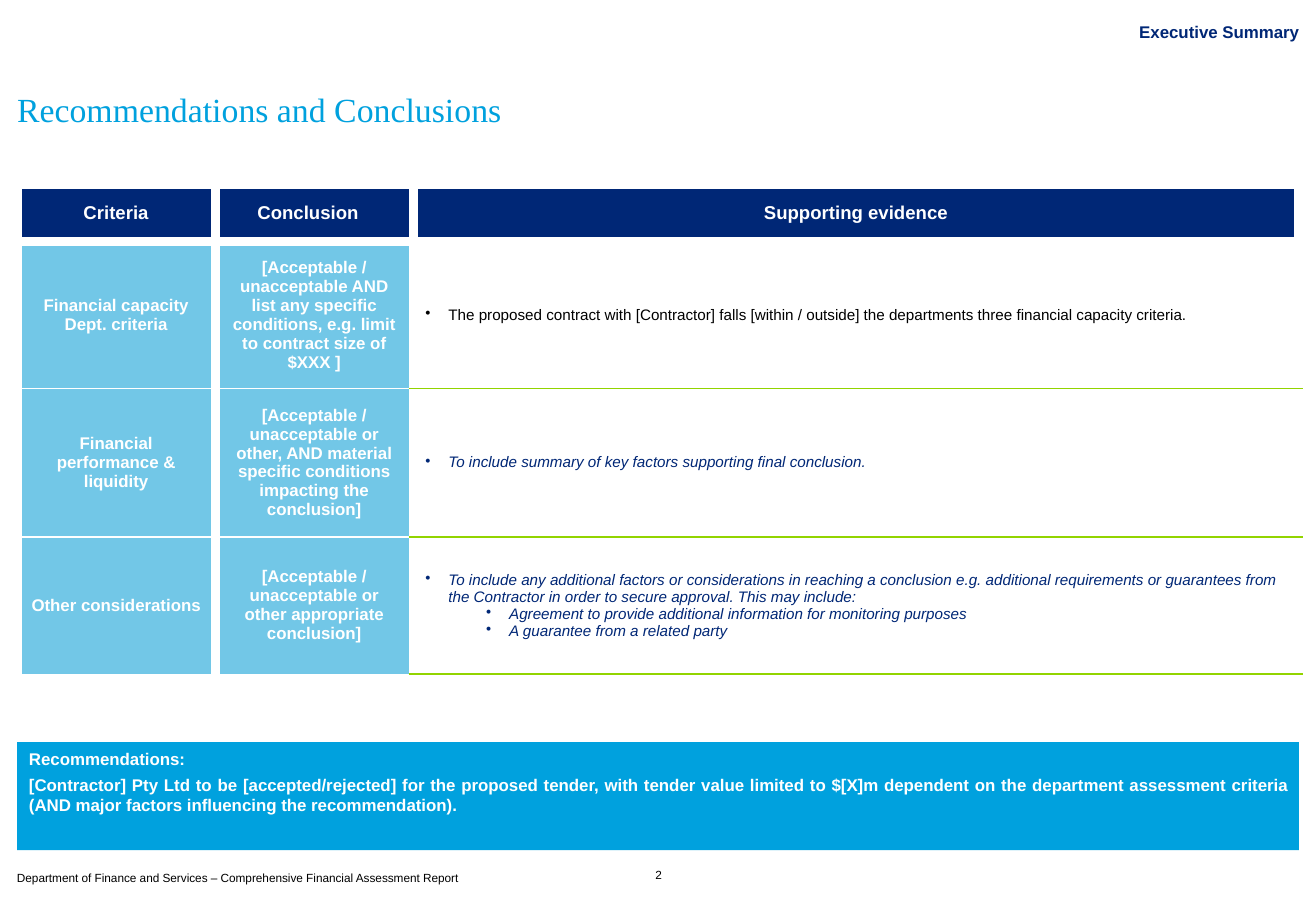
from lxml.etree import SubElement
from pptx import Presentation
from pptx.dml.color import RGBColor
from pptx.enum.shapes import MSO_SHAPE as Shape
from pptx.enum.text import MSO_ANCHOR as Anchor, MSO_AUTO_SIZE as AutoSize, PP_ALIGN as Align
from pptx.oxml import parse_xml
from pptx.oxml.ns import nsdecls, qn
from pptx.util import Inches, Pt

NAVY = RGBColor(0x00, 0x27, 0x76)
BLUE = RGBColor(0x00, 0xA1, 0xDE)
SKY = RGBColor(0x72, 0xC7, 0xE7)
GREEN = RGBColor(0x92, 0xD4, 0x00)
WHITE = RGBColor(0xFF, 0xFF, 0xFF)
BLACK = RGBColor(0x00, 0x00, 0x00)

LEFT, WIDTH = 0.14, 10.55
SPACE_AFTER = 35  # percent of a line

HEADING = dict(size=11, color=WHITE, bold=True)
LABEL = dict(size=10, color=WHITE, bold=True)
PLAIN = dict(size=9, color=BLACK, bold=False)
GUIDANCE = dict(size=9, color=NAVY, bold=False, italic=True)
SMALL = dict(size=7, color=BLACK)

COLUMNS = [1.63, 1.63, 7.29]
ROW_HEIGHTS = [0.44, 1.21, 1.22, 1.13]
HEADINGS = ["Criteria", "Conclusion", "Supporting evidence"]
# Criteria, conclusion, evidence as (indent level, text), evidence style
ROWS = [
    ("Financial capacity Dept. criteria",
     "[Acceptable / unacceptable AND list any specific conditions, e.g. limit to contract size of $XXX ]",
     [(0, "The proposed contract with [Contractor] falls [within / outside] the departments "
          "three financial capacity criteria.")], PLAIN),
    ("Financial performance & liquidity",
     "[Acceptable / unacceptable or other, AND material specific conditions impacting the conclusion]",
     [(0, "To include summary of key factors supporting final conclusion.")], GUIDANCE),
    ("Other considerations",
     "[Acceptable / unacceptable or other appropriate conclusion]",
     [(0, "To include any additional factors or considerations in reaching a conclusion e.g. "
          "additional requirements or guarantees from the Contractor in order to secure approval. "
          "This may include:"),
      (1, "Agreement to provide additional information for monitoring purposes"),
      (1, "A guarantee from a related party")], GUIDANCE),
]


def set_values(target, values):
    for name, value in values.items():
        setattr(target, name, value)


class SlideBuilder:
    def __init__(self, page, font="Arial"):
        self.page = page
        self.font = font

    def para(self, para, text, style, align=Align.LEFT, after=0, level=0, bullet=False):
        set_values(para, dict(alignment=align, level=level, space_before=Pt(0)))
        props = para._p.get_or_add_pPr()
        indent = Inches(0.19) if bullet else 0
        margin = Inches(0.19 + 0.5 * level) if bullet else 0
        props.set("marL", str(margin))
        props.set("indent", str(-indent))
        spacing = SubElement(props, qn("a:spcAft"))
        SubElement(spacing, qn("a:spcPct")).set("val", str(after * 1000))
        if bullet:
            SubElement(props, qn("a:buChar")).set("char", "•")
        else:
            SubElement(props, qn("a:buNone"))
        span = para.add_run()
        span.text = text
        values = dict(name=self.font, bold=False, italic=False) | style
        span.font.color.rgb = values.pop("color")
        values["size"] = Pt(values["size"])
        set_values(span.font, values)

    def paras(self, frame, items, style, **layout):
        """Fill a frame with (level, text) items in one style."""
        for index, (level, text) in enumerate(items):
            para = frame.add_paragraph() if index else frame.paragraphs[0]
            self.para(para, text, style, level=level, **layout)

    def frame(self, shape, anchor, inset=0.0, wrap=True):
        frame = shape.text_frame
        sides = ("margin_left", "margin_top", "margin_right", "margin_bottom")
        set_values(frame, dict.fromkeys(sides, Inches(inset)))
        set_values(frame, dict(auto_size=AutoSize.NONE, word_wrap=wrap, vertical_anchor=anchor))
        return frame

    def placeholder(self, index, bounds, text, style, anchor, **layout):
        holder = self.page.placeholders[index]
        names = ("left", "top", "width", "height")
        set_values(holder, dict(zip(names, map(Inches, bounds))))
        self.paras(self.frame(holder, anchor), [(0, text)], style, **layout)

    def text(self, bounds, text, anchor, **layout):
        box = self.page.shapes.add_textbox(*map(Inches, bounds))
        self.paras(self.frame(box, anchor), [(0, text)], SMALL, **layout)

    def panel(self, bounds, lines):
        box = self.page.shapes.add_shape(Shape.RECTANGLE, *map(Inches, bounds))
        box.shadow.inherit = False
        box.fill.solid()
        box.fill.fore_color.rgb = BLUE
        box.line.fill.background()
        frame = self.frame(box, Anchor.TOP, 0.05)
        set_values(frame, dict(margin_left=Inches(0.1), margin_right=Inches(0.1)))
        self.paras(frame, [(0, line) for line in lines], LABEL,
                   align=Align.JUSTIFY, after=SPACE_AFTER)

    def cell(self, cell, fill, items, style, borders, margins, **layout):
        cell.fill.solid()
        cell.fill.fore_color.rgb = fill
        cell.vertical_anchor = Anchor.MIDDLE
        names = ("margin_left", "margin_top", "margin_right", "margin_bottom")
        set_values(cell, dict(zip(names, map(Inches, margins))))
        props = cell._tc.get_or_add_tcPr()
        for index, (side, (color, width)) in enumerate(borders.items()):
            props.insert(index, parse_xml(
                f'<a:ln{side} {nsdecls("a")} w="{Pt(width)}"><a:solidFill>'
                f'<a:srgbClr val="{color}"/></a:solidFill></a:ln{side}>'))
        self.paras(cell.text_frame, items, style, **layout)

    def table(self, top):
        bounds = map(Inches, (LEFT, top, WIDTH, sum(ROW_HEIGHTS)))
        table = self.page.shapes.add_table(len(ROW_HEIGHTS), len(COLUMNS), *bounds).table
        set_values(table, dict(first_row=False, horz_banding=False))
        for column, width in zip(table.columns, COLUMNS):
            column.width = Inches(width)
        for row, height in zip(table.rows, ROW_HEIGHTS):
            row.height = Inches(height)

        gap = (WHITE, 6)
        centred = dict(align=Align.CENTER, after=SPACE_AFTER)
        for column, heading in enumerate(HEADINGS):
            right = 0.2 if heading == "Conclusion" else 0.1
            self.cell(table.cell(0, column), NAVY, [(0, heading)], HEADING,
                      dict(L=gap, R=gap, B=gap), (0.1, 0.06, right, 0.1), **centred)
        for row, (criteria, conclusion, evidence, style) in enumerate(ROWS, 1):
            label_rule = (WHITE, 0.25 if row == len(ROWS) else 1)
            contents = [(SKY, [(0, criteria)], LABEL, WHITE, label_rule, centred),
                        (SKY, [(0, conclusion)], LABEL, WHITE, label_rule, centred),
                        (WHITE, evidence, style, GREEN, (GREEN, 1), dict(bullet=True))]
            for column, (fill, items, font, color, rule, layout) in enumerate(contents):
                above = gap if row == 1 else (color, 1)
                self.cell(table.cell(row, column), fill, items, font,
                          dict(L=gap, R=gap, T=above, B=rule), (0.1, 0.04, 0.1, 0.04), **layout)


def main():
    deck = Presentation()
    set_values(deck, dict(slide_width=Inches(10.83), slide_height=Inches(7.5)))
    builder = SlideBuilder(deck.slides.add_slide(deck.slide_layouts[1]))
    builder.placeholder(0, (6.62, 0.18, 4.07, 0.17), "Executive Summary",
                        dict(size=10, color=NAVY, bold=True), Anchor.TOP, align=Align.RIGHT)
    builder.placeholder(1, (LEFT, 0.34, 10.56, 1.12), "Recommendations and Conclusions",
                        dict(size=20, color=BLUE, name="Times New Roman"), Anchor.MIDDLE,
                        after=SPACE_AFTER)
    builder.table(1.55)
    builder.panel((LEFT, 6.11, WIDTH, 0.89), [
        "Recommendations:",
        "[Contractor] Pty Ltd to be [accepted/rejected] for the proposed tender, with tender value "
        "limited to $[X]m dependent on the department assessment criteria (AND major factors "
        "influencing the recommendation).",
    ])
    builder.text((LEFT, 7.17, 5, 0.16),
                 "Department of Finance and Services – Comprehensive Financial Assessment Report",
                 Anchor.TOP)
    builder.text((5.27, 7.14, 0.3, 0.12), "2", Anchor.BOTTOM, align=Align.CENTER)
    deck.save("out.pptx")


if __name__ == "__main__":
    main()
